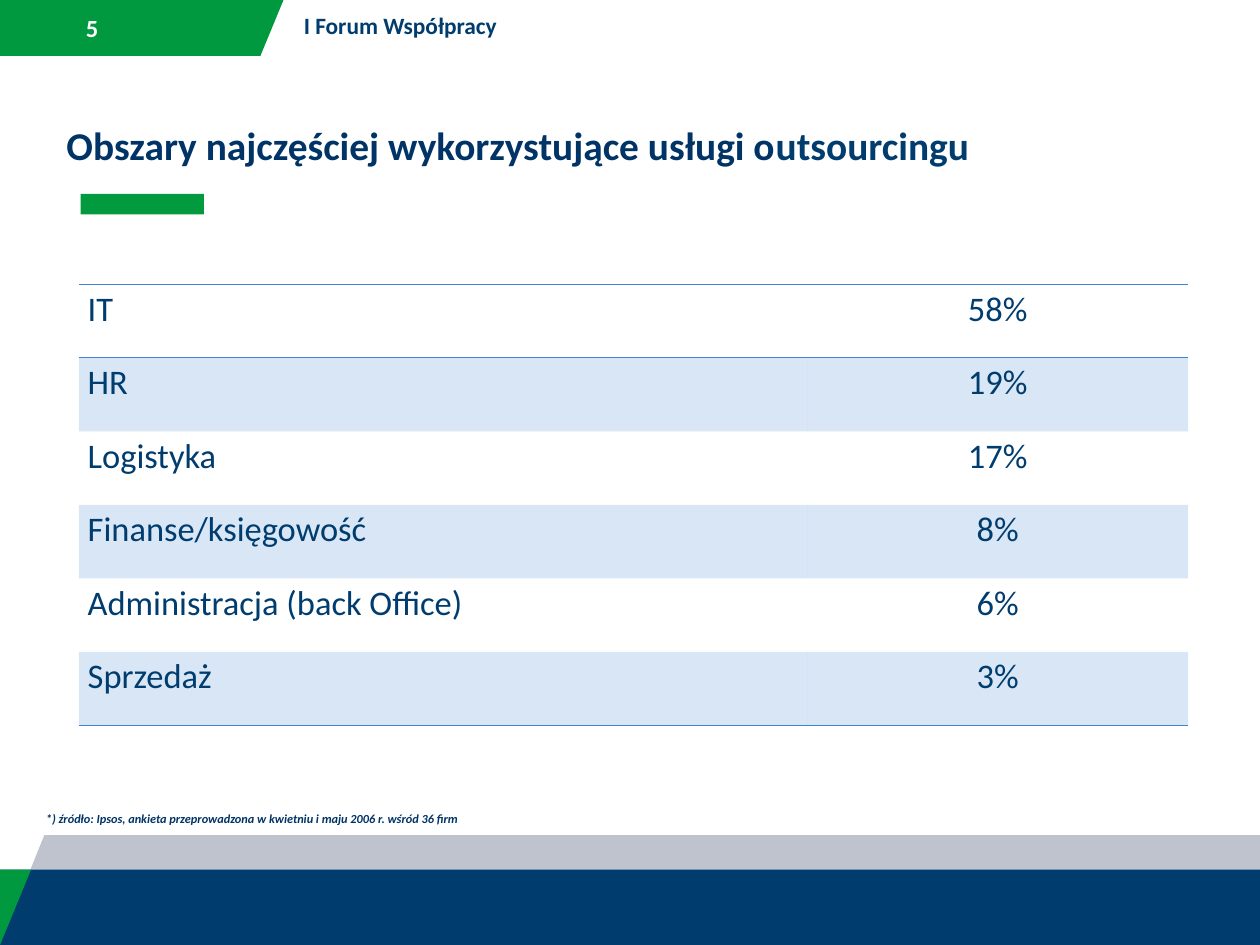
from lxml.etree import SubElement
from pptx import Presentation
from pptx.dml.color import RGBColor
from pptx.enum.shapes import MSO_SHAPE
from pptx.enum.text import MSO_ANCHOR, MSO_AUTO_SIZE, PP_ALIGN
from pptx.oxml import parse_xml
from pptx.oxml.ns import nsdecls, qn
from pptx.util import Inches, Pt

WIDTH, HEIGHT = 14.22, 10.67
NAVY, INK, GREEN, GRAY, BLUE, WHITE = "003D6E", "003366", "00993F", "BEC3CE", "3F84D2", "FFFFFF"
NO_STYLE = "{2D5ABB26-0587-4C30-8999-92F81FD0307C}"


def color(value):
    """Turn a hex string into a colour."""
    return RGBColor.from_string(value)


class ForumSlide:
    """Holds the forum style and adds elements to the current slide."""

    font_name = "Calibri"

    def __init__(self, slide):
        """Keep the slide that receives the elements."""
        self.slide = slide

    def paint(self, shape, fill):
        """Give a shape a plain fill without line or shadow."""
        shape.fill.solid()
        shape.fill.fore_color.rgb = color(fill)
        shape.line.fill.background()
        shape.shadow.inherit = False

    def band(self, points, fill):
        """Add a filled outline through points given in inches."""
        corners = [(Inches(x), Inches(y)) for x, y in points]
        builder = self.slide.shapes.build_freeform(*corners[0], scale=1)
        builder.add_line_segments(corners[1:], close=True)
        self.paint(builder.convert_to_shape(), fill)

    def bar(self, left, top, width, height, fill):
        """Add a filled rectangle."""
        box = map(Inches, (left, top, width, height))
        self.paint(self.slide.shapes.add_shape(MSO_SHAPE.RECTANGLE, *box), fill)

    def add_runs(self, paragraph, runs, size, bold=False, italic=False):
        """Add runs given as pairs of text and colour."""
        for words, ink in runs:
            run = paragraph.add_run()
            run.text = words
            run.font.name, run.font.size = self.font_name, Pt(size)
            run.font.bold, run.font.italic = bold, italic
            run.font.color.rgb = color(ink)

    def fill_frame(self, frame, runs, size, italic=False, anchor=MSO_ANCHOR.TOP):
        """Format a text frame and put one bold paragraph in it."""
        frame.word_wrap = True
        frame.auto_size = MSO_AUTO_SIZE.NONE
        frame.vertical_anchor = anchor
        frame.paragraphs[0].alignment = PP_ALIGN.LEFT
        self.add_runs(frame.paragraphs[0], runs, size, True, italic)

    def title(self, left, top, width, height, runs, size):
        """Place and fill the title placeholder."""
        heading = self.slide.shapes.title
        heading.left, heading.top = Inches(left), Inches(top)
        heading.width, heading.height = Inches(width), Inches(height)
        self.fill_frame(heading.text_frame, runs, size)

    def label(self, left, top, width, height, runs, size, inset=None, **options):
        """Add a text box."""
        box = map(Inches, (left, top, width, height))
        frame = self.slide.shapes.add_textbox(*box).text_frame
        if inset is not None:
            frame.margin_left = frame.margin_right = Inches(inset)
            frame.margin_top = frame.margin_bottom = Inches(inset)
        self.fill_frame(frame, runs, size, **options)

    def rule(self, cell, sides):
        """Draw one-point borders on the named sides of a cell."""
        for index, side in enumerate(sides):
            line = parse_xml(
                f'<a:{side} {nsdecls("a")} w="12700"><a:solidFill>'
                f'<a:srgbClr val="{BLUE}"/></a:solidFill></a:{side}>'
            )
            cell._tc.get_or_add_tcPr().insert(index, line)

    def shade(self, cell, shaded):
        """Tint a cell lightly or leave it clear."""
        if not shaded:
            cell.fill.background()
            return
        cell.fill.solid()
        cell.fill.fore_color.rgb = color(BLUE)
        tint = cell._tc.tcPr.find(".//" + qn("a:srgbClr"))
        SubElement(tint, qn("a:alpha"), val="20000")

    def share_table(self, left, top, widths, row_height, shares, size):
        """Add the table of areas and their shares."""
        box = map(Inches, (left, top, sum(widths), row_height * len(shares)))
        table = self.slide.shapes.add_table(len(shares), len(widths), *box).table
        table.first_row = table.horz_banding = False
        table._tbl.tblPr.find(qn("a:tableStyleId")).text = NO_STYLE
        for column, width in zip(table.columns, widths):
            column.width = Inches(width)
        borders = {0: ("lnT", "lnB"), len(shares) - 1: ("lnB",)}
        for row, entry in enumerate(shares):
            table.rows[row].height = Inches(row_height)
            for column, words in enumerate(entry):
                cell = table.cell(row, column)
                paragraph = cell.text_frame.paragraphs[0]
                paragraph.alignment = PP_ALIGN.CENTER if column else PP_ALIGN.LEFT
                self.add_runs(paragraph, [(words, NAVY)], size)
                self.shade(cell, row % 2 == 1)
                self.rule(cell, borders.get(row, ()))


def main():
    """Build and save the slide."""
    deck = Presentation()
    deck.slide_width, deck.slide_height = Inches(WIDTH), Inches(HEIGHT)
    forum = ForumSlide(deck.slides.add_slide(deck.slide_layouts[5]))

    forum.band([(0, 0), (3.2, 0), (2.94, 0.63), (0, 0.63)], GREEN)
    forum.band([(0, HEIGHT), (0.5, 9.43), (WIDTH, 9.43), (WIDTH, HEIGHT)], GRAY)
    forum.bar(0, 9.82, WIDTH, HEIGHT - 9.82, NAVY)
    forum.band([(0, 9.82), (0.35, 9.82), (0, HEIGHT)], GREEN)
    forum.bar(0.91, 2.19, 1.39, 0.23, "029A3F")

    forum.label(0.91, 0.09, 0.85, 0.45, [("5", WHITE)], 20, inset=0.06, anchor=MSO_ANCHOR.MIDDLE)
    forum.title(
        0.65, 1.32, 13.39, 1.18,
        [("Obszary najczęściej wykorzystujące usługi o", INK), ("utsourcingu", NAVY)], 32,
    )
    shares = [
        ("IT", "58%"),
        ("HR", "19%"),
        ("Logistyka", "17%"),
        ("Finanse/księgowość", "8%"),
        ("Administracja (back Office)", "6%"),
        ("Sprzedaż", "3%"),
    ]
    forum.share_table(0.89, 3.21, (8.22, 4.3), 0.83, shares, 28)
    source = "*) źródło: Ipsos, ankieta przeprowadzona w kwietniu i maju 2006 r. wśród 36 firm"
    forum.label(0.42, 9.11, 13.39, 0.51, [(source, INK)], 10, italic=True)
    forum.label(3.33, 0.08, 10.08, 0.42, [("I Forum Współpracy", NAVY)], 19)

    deck.save("out.pptx")


if __name__ == "__main__":
    main()
